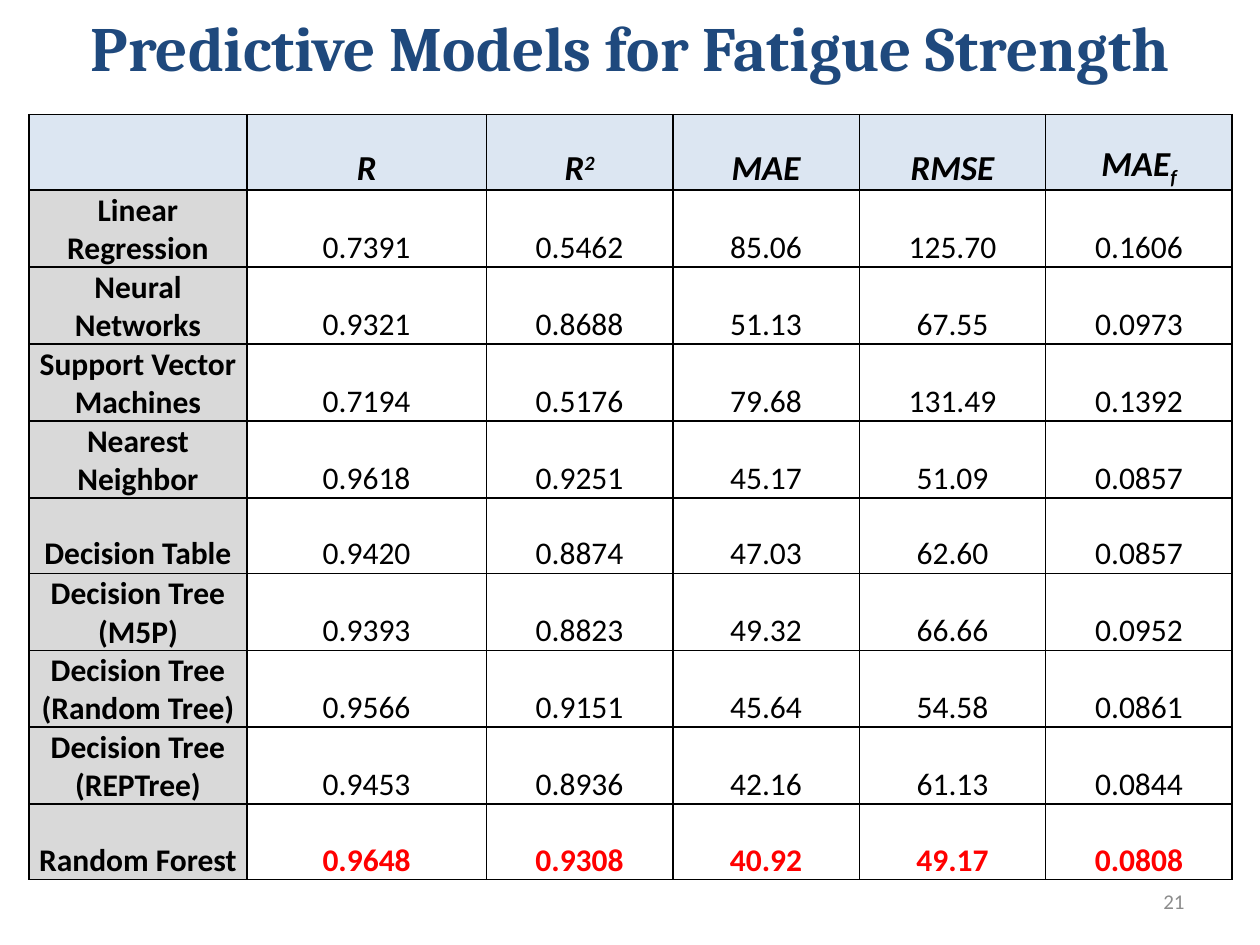
"""Build a slide with a table comparing predictive models for fatigue strength."""
from lxml.etree import SubElement
from pptx import Presentation
from pptx.dml.color import RGBColor
from pptx.enum.text import MSO_ANCHOR as ANCHOR, PP_ALIGN as ALIGN
from pptx.oxml import parse_xml
from pptx.oxml.ns import nsdecls, qn
from pptx.util import Inches, Pt


def color(hex_code):
    return RGBColor.from_string(hex_code)


def write(paragraph, text, size=18, font="Calibri", fill="000000", bold=False,
          italic=False, align=ALIGN.CENTER, baseline=None):
    paragraph.alignment = align
    run = paragraph.add_run()
    run.text = text
    run.font.size, run.font.name = Pt(size), font
    run.font.bold, run.font.italic = bold, italic
    run.font.color.rgb = color(fill)
    if baseline is not None:
        run.font._element.set("baseline", str(baseline * 1000))


metrics = [[("R", None)], [("R", None), ("2", 30)], [("MAE", None)],
           [("RMSE", None)], [("MAE", None), ("f", -25)]]
models = [
    ("Linear Regression", "0.7391", "0.5462", "85.06", "125.70", "0.1606"),
    ("Neural Networks", "0.9321", "0.8688", "51.13", "67.55", "0.0973"),
    ("Support Vector Machines", "0.7194", "0.5176", "79.68", "131.49", "0.1392"),
    ("Nearest Neighbor", "0.9618", "0.9251", "45.17", "51.09", "0.0857"),
    ("Decision Table", "0.9420", "0.8874", "47.03", "62.60", "0.0857"),
    ("Decision Tree (M5P)", "0.9393", "0.8823", "49.32", "66.66", "0.0952"),
    ("Decision Tree (Random Tree)", "0.9566", "0.9151", "45.64", "54.58", "0.0861"),
    ("Decision Tree (REPTree)", "0.9453", "0.8936", "42.16", "61.13", "0.0844"),
    ("Random Forest", "0.9648", "0.9308", "40.92", "49.17", "0.0808"),
]
best_model = "Random Forest"
column_widths = [1.73, 1.9] + [1.48] * 4
row_height = 0.6

prs = Presentation()
prs.slide_width, prs.slide_height = Inches(10), Inches(7.5)
slide = prs.slides.add_slide(prs.slide_layouts[5])

page_number = slide.shapes.add_textbox(Inches(7.17), Inches(6.95), Inches(2.33), Inches(0.4))
page_number.text_frame.word_wrap = True
page_number.text_frame.vertical_anchor = ANCHOR.MIDDLE
write(page_number.text_frame.paragraphs[0], "21", size=12, fill="8C8C8C", align=ALIGN.RIGHT)

results = slide.shapes.add_table(
    len(models) + 1, len(column_widths), Inches(0.23), Inches(0.91),
    Inches(sum(column_widths)), Inches(row_height * (len(models) + 1))).table
results.first_row = results.horz_banding = False
for column, width in zip(results.columns, column_widths):
    column.width = Inches(width)
for row in results.rows:
    row.height = Inches(row_height)

for cell in results.iter_cells():
    cell.vertical_anchor = ANCHOR.BOTTOM
    cell.margin_left = cell.margin_right = cell.margin_top = Inches(0.01)
    cell.margin_bottom = 0
    for side in ("lnL", "lnR", "lnT", "lnB"):
        border = parse_xml(f'<a:{side} {nsdecls("a")} w="{Pt(1)}"/>')
        line_fill = SubElement(border, qn("a:solidFill"))
        SubElement(line_fill, qn("a:srgbClr"), val="000000")
        cell._tc.get_or_add_tcPr().append(border)
    cell.fill.background()

for index in range(len(column_widths)):
    header = results.cell(0, index)
    header.fill.solid()
    header.fill.fore_color.rgb = color("DCE6F2")
    if index:
        for text, baseline in metrics[index - 1]:
            write(header.text_frame.paragraphs[0], text, size=20, bold=True,
                  italic=True, baseline=baseline)

for row_index, (model, *scores) in enumerate(models, start=1):
    name_cell = results.cell(row_index, 0)
    name_cell.fill.solid()
    name_cell.fill.fore_color.rgb = color("D9D9D9")
    write(name_cell.text_frame.paragraphs[0], model, bold=True)
    is_best = model == best_model
    for column_index, score in enumerate(scores, start=1):
        write(results.cell(row_index, column_index).text_frame.paragraphs[0], score,
              bold=is_best, fill="FF0000" if is_best else "000000")

title = slide.shapes.title
title.left, title.top, title.width, title.height = 0, Inches(0.02), Inches(10), Inches(1.25)
title.text_frame.vertical_anchor = ANCHOR.TOP
write(title.text_frame.paragraphs[0], "Predictive Models for Fatigue Strength",
      size=36, font="Cambria", fill="1F497D", bold=True)

prs.save("out.pptx")
